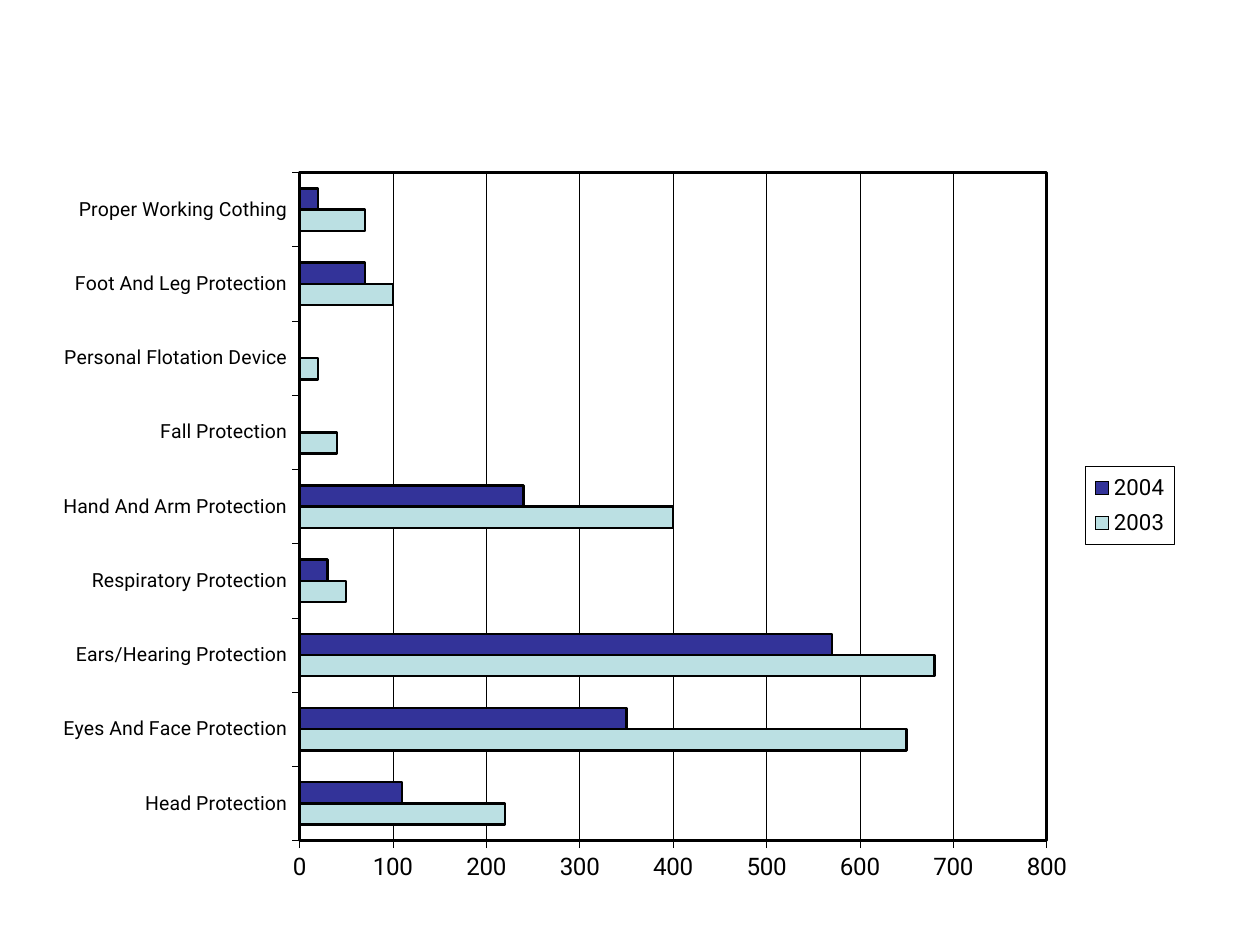
from dataclasses import dataclass

from lxml.etree import SubElement
from pptx import Presentation
from pptx.chart.data import CategoryChartData
from pptx.dml.color import RGBColor
from pptx.enum.chart import XL_CHART_TYPE, XL_LEGEND_POSITION, XL_TICK_MARK
from pptx.oxml import parse_xml
from pptx.oxml.ns import nsdecls, qn
from pptx.util import Cm, Pt

COLORS = {"ink": "000000", "paper": "FFFFFF", "pale": "BBE0E3", "navy": "333399"}
FONT = "Roboto"
THIN, THICK = 0.35, 1.38


@dataclass
class Year:
    name: str
    fill: str
    counts: tuple[int, ...]


GEAR = (
    "Head Protection",
    "Eyes And Face Protection",
    "Ears/Hearing Protection",
    "Respiratory Protection",
    "Hand And Arm Protection",
    "Fall Protection",
    "Personal Flotation Device",
    "Foot And Leg Protection",
    "Proper Working Cothing",
)
YEARS = (
    Year("2003", "pale", (220, 650, 680, 50, 400, 40, 20, 100, 70)),
    Year("2004", "navy", (110, 350, 570, 30, 240, 0, 0, 70, 20)),
)


def color(name: str) -> RGBColor:
    return RGBColor.from_string(COLORS[name])


def style(text, *, size: float, bold: bool = False, ink: str = "ink") -> None:
    font = text.font
    font.name, font.size, font.bold = FONT, Pt(size), bold
    font.color.rgb = color(ink)


def stroke(line, width: float) -> None:
    line.color.rgb = color("ink")
    line.width = Pt(width)


def layout(x: float, y: float, w: float, h: float, inner: bool = False):
    root = parse_xml(f"<c:layout {nsdecls('c')}/>")
    box = SubElement(root, qn("c:manualLayout"))
    rows = [("layoutTarget", "inner")] if inner else []
    rows += [("xMode", "edge"), ("yMode", "edge")]
    rows += [("x", x), ("y", y), ("w", w), ("h", h)]
    for tag, value in rows:
        SubElement(box, qn(f"c:{tag}")).set("val", str(value))
    return root


def outline(width: float, fill: str):
    return parse_xml(
        f"<c:spPr {nsdecls('c', 'a')}>"
        f'<a:solidFill><a:srgbClr val="{COLORS[fill]}"/></a:solidFill>'
        f'<a:ln w="{Pt(width)}"><a:solidFill><a:srgbClr val="{COLORS["ink"]}"/>'
        "</a:solidFill></a:ln></c:spPr>"
    )


def place(part, box) -> None:
    for old in part.findall(qn("c:layout")):
        part.remove(old)
    if part.tag == qn("c:plotArea"):
        part.insert(0, box)
    else:
        part.find(qn("c:legendPos")).addnext(box)


def format_axis(axis, size: float) -> None:
    style(axis.tick_labels, size=size)
    stroke(axis.format.line, THIN)
    axis.major_tick_mark = XL_TICK_MARK.OUTSIDE
    axis.minor_tick_mark = XL_TICK_MARK.NONE


def draw_chart(slide) -> None:
    data = CategoryChartData()
    data.categories = GEAR
    for year in YEARS:
        data.add_series(year.name, year.counts)
    chart = slide.shapes.add_chart(
        XL_CHART_TYPE.BAR_CLUSTERED, Cm(0.67), Cm(3.08), Cm(23.14), Cm(15.34), data
    ).chart
    chart.has_title = False
    style(chart, size=24.9, bold=True)

    plot = chart.plots[0]
    plot.gap_width, plot.overlap = 150, 0
    plot.vary_by_categories = False
    for bar, year in zip(plot.series, YEARS):
        bar.format.fill.solid()
        bar.format.fill.fore_color.rgb = color(year.fill)
        stroke(bar.format.line, THICK)

    format_axis(chart.category_axis, 11.1)
    scale = chart.value_axis
    format_axis(scale, 13.8)
    scale.minimum_scale, scale.maximum_scale, scale.major_unit = 0, 800, 100
    scale.has_major_gridlines = True
    stroke(scale.major_gridlines.format.line, THIN)

    chart.has_legend = True
    legend = chart.legend
    legend.position = XL_LEGEND_POSITION.RIGHT
    legend.include_in_layout = False
    style(legend, size=12.7)

    area = chart.element.find(f".//{qn('c:plotArea')}")
    place(area, layout(0.232, 0.026, 0.651, 0.878, inner=True))
    area.append(outline(THICK, "paper"))
    key = chart.element.find(f".//{qn('c:legend')}")
    place(key, layout(0.917, 0.412, 0.077, 0.103))
    key.find(qn("c:txPr")).addprevious(outline(THIN, "paper"))


def main() -> None:
    deck = Presentation()
    deck.slide_width, deck.slide_height = Cm(25.4), Cm(19.05)
    draw_chart(deck.slides.add_slide(deck.slide_layouts[6]))
    deck.save("out.pptx")


if __name__ == "__main__":
    main()
